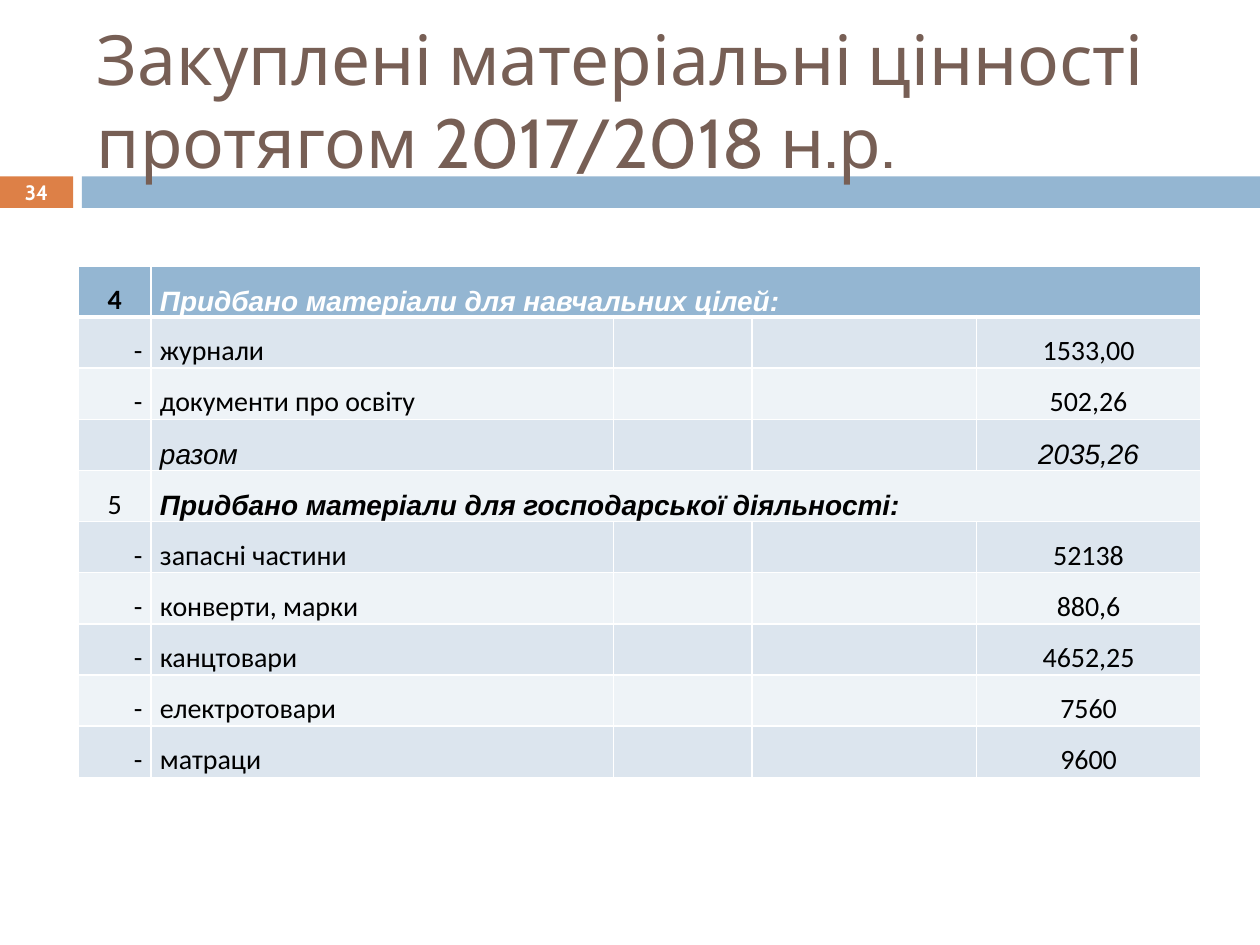
from dataclasses import dataclass

from lxml.etree import SubElement
from pptx import Presentation
from pptx.dml.color import RGBColor
from pptx.enum.shapes import MSO_SHAPE
from pptx.enum.text import MSO_ANCHOR, PP_ALIGN
from pptx.oxml.ns import qn
from pptx.util import Inches, Pt

WHITE, BLACK, BLUE, ORANGE, BROWN = "FFFFFF", "000000", "94B6D2", "DD8047", "775F55"
BANDS = ("EEF3F7", "DCE5EE")
COLUMNS = (0.58, 3.67, 1.1, 1.78, 1.78)
ROW_HEIGHT = 0.406


@dataclass
class Style:
    size: float
    font: str
    color: str = BLACK
    bold: bool = False
    italic: bool = False


@dataclass
class Row:
    mark: str
    name: str
    amount: str = ""
    heading: bool = False
    total: bool = False


ROWS = (
    Row("4", "Придбано матеріали для навчальних цілей:", heading=True),
    Row(" -", "журнали", "1533,00"),
    Row(" -", "документи про освіту", "502,26"),
    Row("", "разом", "2035,26", total=True),
    Row("5", "Придбано матеріали для господарської діяльності:", heading=True),
    Row(" -", "запасні частини", "52138"),
    Row(" -", "конверти, марки", "880,6"),
    Row(" -", "канцтовари", "4652,25"),
    Row(" -", "електротовари", "7560"),
    Row(" -", "матраци", "9600"),
)


def rgb(color: str) -> RGBColor:
    return RGBColor.from_string(color)


def write(tf, text: str, style: Style, align=PP_ALIGN.LEFT) -> None:
    p = tf.paragraphs[0]
    p.alignment = align
    r = p.add_run()
    r.text = text
    r.font.size = Pt(style.size)
    r.font.name = style.font
    r.font.bold = style.bold
    r.font.italic = style.italic
    r.font.color.rgb = rgb(style.color)


def add_bar(s, left: float, width: float, color: str) -> None:
    sp = s.shapes.add_shape(MSO_SHAPE.RECTANGLE, Inches(left), Inches(1.4), Inches(width), Inches(0.25))
    sp.shadow.inherit = False
    sp.fill.solid()
    sp.fill.fore_color.rgb = rgb(color)
    sp.line.fill.background()


def add_text(s, box: tuple, text: str, style: Style, align=PP_ALIGN.LEFT) -> None:
    tf = s.shapes.add_textbox(*map(Inches, box)).text_frame
    tf.word_wrap = True
    tf.vertical_anchor = MSO_ANCHOR.MIDDLE
    write(tf, text, style, align)


def format_cell(cell, color: str, top: float = 1, bottom: float = 1) -> None:
    cell.margin_left = cell.margin_right = Inches(0.07)
    cell.margin_top = cell.margin_bottom = 0
    cell.vertical_anchor = MSO_ANCHOR.BOTTOM
    tcPr = cell._tc.get_or_add_tcPr()
    for side, width in (("L", 1), ("R", 1), ("T", top), ("B", bottom)):
        ln = SubElement(tcPr, qn(f"a:ln{side}"), w=str(Pt(width)))
        SubElement(SubElement(ln, qn("a:solidFill")), qn("a:srgbClr"), val=WHITE)
    cell.fill.solid()
    cell.fill.fore_color.rgb = rgb(color)


def fill_row(table, i: int, row: Row) -> None:
    first = i == 0
    for j in range(len(COLUMNS)):
        format_cell(table.cell(i, j), BLUE if first else BANDS[i % 2],
                    top=3 if i == 1 else 1, bottom=3 if first else 1)
    if row.heading:
        table.cell(i, 1).merge(table.cell(i, len(COLUMNS) - 1))
    slanted = row.heading or row.total
    plain = Style(16, "Arial" if slanted else "Calibri", WHITE if first else BLACK,
                  bold=row.heading, italic=slanted)
    mark = Style(16, "Calibri", bold=first)
    mark_align = PP_ALIGN.CENTER if row.heading else PP_ALIGN.RIGHT
    entries = ((0, row.mark, mark, mark_align),
               (1, row.name, plain, PP_ALIGN.LEFT),
               (4, row.amount, plain, PP_ALIGN.CENTER))
    for j, text, style, align in entries:
        if text:
            write(table.cell(i, j).text_frame, text, style, align)


def add_purchases(s) -> None:
    table = s.shapes.add_table(len(ROWS), len(COLUMNS), Inches(0.62), Inches(2.11),
                               Inches(sum(COLUMNS)), Inches(ROW_HEIGHT * len(ROWS))).table
    table.first_row = table.horz_banding = False
    for column, width in zip(table.columns, COLUMNS):
        column.width = Inches(width)
    for i, row in enumerate(ROWS):
        table.rows[i].height = Inches(ROW_HEIGHT)
        fill_row(table, i, row)


def main() -> None:
    prs = Presentation()
    prs.slide_width, prs.slide_height = Inches(10), Inches(7.5)
    s = prs.slides.add_slide(prs.slide_layouts[6])
    add_bar(s, 0, 0.58, ORANGE)
    add_bar(s, 0.65, 9.35, BLUE)
    add_text(s, (0.67, 0.25, 8.92, 1.08), "Закуплені матеріальні цінності протягом 2017/2018 н.р.",
             Style(39.6, "Cabin", BROWN))
    add_purchases(s)
    add_text(s, (0, 1.39, 0.58, 0.27), "34", Style(11.9, "Cabin", WHITE, bold=True), PP_ALIGN.CENTER)
    prs.save("out.pptx")


if __name__ == "__main__":
    main()
